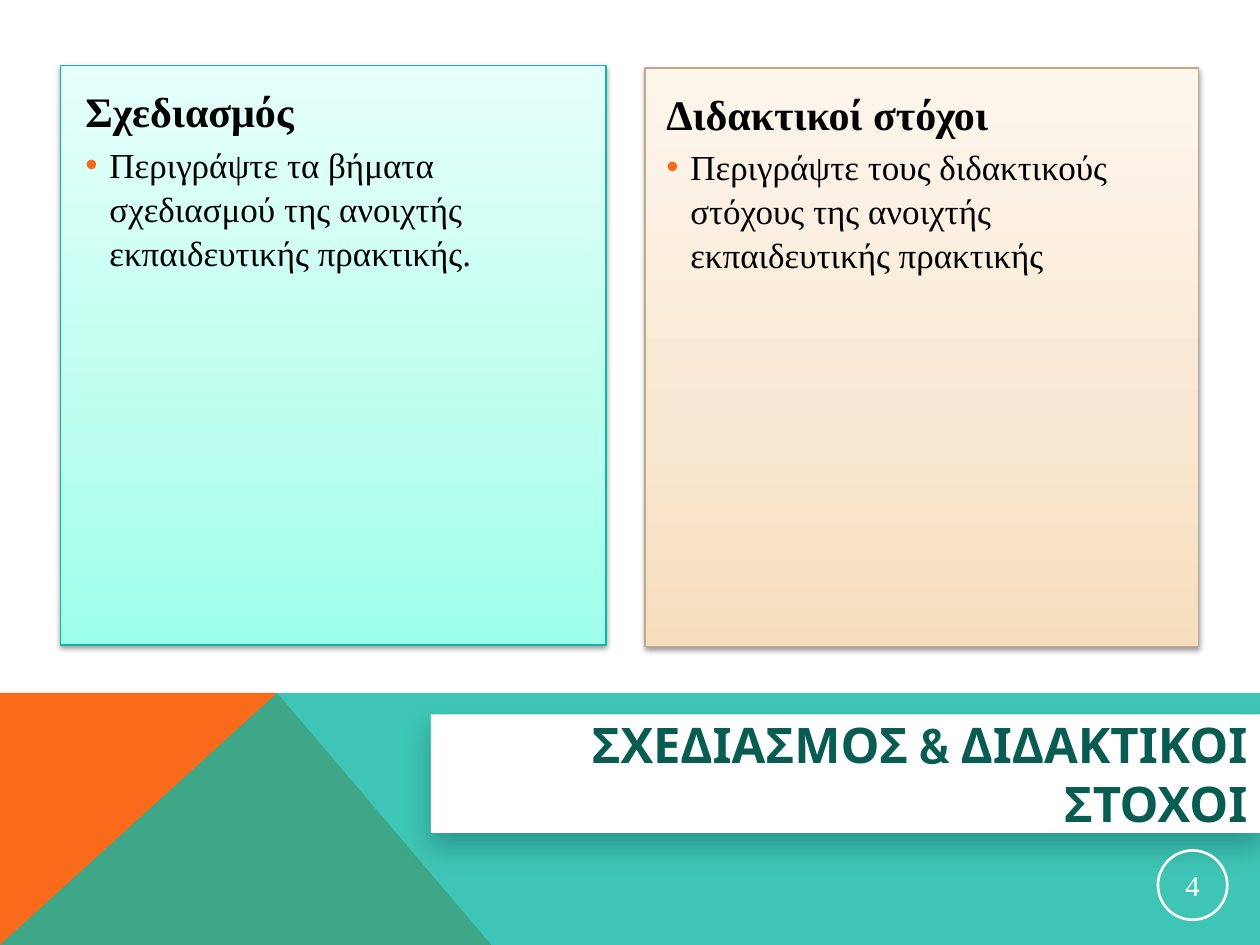
from dataclasses import dataclass

import pptx
import pptx.dml.color
import pptx.enum.shapes
import pptx.enum.text
import pptx.oxml.ns
import pptx.util
from lxml import etree

RGB = pptx.dml.color.RGBColor
Pt = pptx.util.Pt
SHAPE = pptx.enum.shapes.MSO_SHAPE
ALIGN = pptx.enum.text.PP_ALIGN
MIDDLE = pptx.enum.text.MSO_ANCHOR.MIDDLE

WHITE = RGB(0xFF, 0xFF, 0xFF)
BLACK = RGB(0, 0, 0)
ORANGE = RGB(0xF9, 0x6A, 0x1B)
TEAL = RGB(0x10, 0xB7, 0xA3)
DARK = RGB(0x08, 0x5C, 0x52)
MINT_LINE = RGB(0x0C, 0xB7, 0xA3)
MINT = (RGB(0x9D, 0xFF, 0xEA), RGB(0xBA, 0xFF, 0xEF), RGB(0xE5, 0xFF, 0xF9))
SAND_LINE = RGB(0xBF, 0xA9, 0x89)
SAND = (RGB(0xF6, 0xDE, 0xBD), RGB(0xF8, 0xE7, 0xD1), RGB(0xFD, 0xF6, 0xEC))
STOPS = (0, 35, 100)
SERIF = "Times New Roman"

# Grid of 100 columns by 75 rows, each a tenth of an inch
COLS, ROWS = 100, 75
CELL = pptx.util.Inches(0.1)


@dataclass
class Box:
    col: float
    row: float
    wide: float
    high: float

    def place(self) -> tuple:
        return tuple(round(n * CELL) for n in (self.col, self.row, self.wide, self.high))


@dataclass
class Shade:
    color: RGB
    alpha: int
    blur: float
    dist: float


@dataclass
class Panel:
    frame: Box
    text: Box
    tints: tuple
    line: RGB
    head: str
    item: str


SOFT = Shade(BLACK, 38, 3.1, 1.6)
DEEP = Shade(DARK, 40, 16, 8)
PANELS = (
    Panel(Box(51.2, 5.4, 43.9, 45.9), Box(51.9, 6.3, 42.3, 44.4), SAND, SAND_LINE,
          "Διδακτικοί στόχοι",
          "Περιγράψτε τους διδακτικούς στόχους της ανοιχτής εκπαιδευτικής πρακτικής"),
    Panel(Box(4.8, 5.2, 43.3, 46), Box(5.8, 6.1, 41.4, 44.4), MINT, MINT_LINE,
          "Σχεδιασμός",
          "Περιγράψτε τα βήματα σχεδιασμού της ανοιχτής εκπαιδευτικής πρακτικής."),
)


def add(parent, tag: str, **attrs):
    """Append one XML element and return it."""
    node = etree.SubElement(parent, pptx.oxml.ns.qn(tag))
    for key, val in attrs.items():
        node.set(key, str(val))
    return node


def add_tint(parent, color: RGB, alpha: int = 100) -> None:
    tint = add(parent, "a:srgbClr", val=color)
    if alpha < 100:
        add(tint, "a:alpha", val=alpha * 1000)


def cast(shape, shade: Shade) -> None:
    """Give a shape a shadow that falls straight down."""
    shape.shadow.inherit = False
    props = shape.element.spPr.find(pptx.oxml.ns.qn("a:effectLst"))
    outer = add(props, "a:outerShdw", blurRad=Pt(shade.blur), dist=Pt(shade.dist),
                dir=90 * 60000, algn="ctr", rotWithShape=0)
    add_tint(outer, shade.color, shade.alpha)


def style(para, size: float, color: RGB, face: str, bold: bool = False) -> None:
    for run in para.runs:
        font = run.font
        font.size, font.name, font.bold = Pt(size), face, bold
        font.color.rgb = color


def draw_poly(slide, points: list, color: RGB, alpha: int = 100) -> None:
    pen = slide.shapes.build_freeform(*points[0], scale=float(CELL))
    pen.add_line_segments(points[1:], close=True)
    shape = pen.convert_to_shape()
    shape.shadow.inherit = False
    shape.line.fill.background()
    shape.fill.solid()
    shape.fill.fore_color.rgb = color
    if alpha < 100:
        tint = shape.element.spPr.find(".//" + pptx.oxml.ns.qn("a:srgbClr"))
        add(tint, "a:alpha", val=alpha * 1000)


def draw_frame(slide, panel: Panel) -> None:
    shape = slide.shapes.add_shape(SHAPE.RECTANGLE, *panel.frame.place())
    shape.fill.gradient()
    shape.fill.gradient_angle = 90
    stops = shape.element.spPr.find(".//" + pptx.oxml.ns.qn("a:gsLst"))
    for old in list(stops):
        stops.remove(old)
    for pos, color in zip(STOPS, panel.tints):
        add_tint(add(stops, "a:gs", pos=pos * 1000), color)
    shape.line.color.rgb = panel.line
    shape.line.width = Pt(0.75)
    cast(shape, SOFT)


def draw_text(slide, panel: Panel) -> None:
    frame = slide.shapes.add_textbox(*panel.text.place()).text_frame
    frame.word_wrap = True
    head = frame.paragraphs[0]
    head.text = panel.head
    head.line_spacing = 1.05
    style(head, 24, BLACK, SERIF, True)

    item = frame.add_paragraph()
    item.text = panel.item
    item.line_spacing = 1.05
    item.space_before = Pt(3)
    props = item._p.get_or_add_pPr()
    hang = round(1.9 * CELL)
    props.set("marL", str(hang))
    props.set("indent", str(-hang))
    add_tint(add(props, "a:buClr"), ORANGE)
    add(props, "a:buFont", typeface="Arial")
    add(props, "a:buChar", char="•")
    style(item, 20, BLACK, SERIF)


def draw_title(slide, box: Box, text: str) -> None:
    title = slide.shapes.title
    title.element.getparent().append(title.element)  # bring to the front
    title.left, title.top, title.width, title.height = box.place()
    title.fill.solid()
    title.fill.fore_color.rgb = WHITE
    cast(title, DEEP)
    frame = title.text_frame
    frame.text = text
    frame.word_wrap = True
    frame.auto_size = pptx.enum.text.MSO_AUTO_SIZE.NONE
    frame.vertical_anchor = MIDDLE
    frame.paragraphs[0].alignment = ALIGN.RIGHT
    style(frame.paragraphs[0], 28, DARK, "Cabin", True)


def draw_badge(slide, box: Box, text: str) -> None:
    ring = slide.shapes.add_shape(SHAPE.OVAL, *box.place())
    ring.shadow.inherit = False
    ring.fill.background()
    ring.line.color.rgb = WHITE
    ring.line.width = Pt(1.5)
    frame = ring.text_frame
    frame.margin_left = frame.margin_right = Pt(0.72)
    frame.margin_top = frame.margin_bottom = Pt(0.72)
    frame.vertical_anchor = MIDDLE
    frame.text = text
    frame.paragraphs[0].alignment = ALIGN.CENTER
    style(frame.paragraphs[0], 16.5, WHITE, SERIF)


def main() -> None:
    deck = pptx.Presentation()
    deck.slide_width, deck.slide_height = COLS * CELL, ROWS * CELL
    slide = deck.slides.add_slide(deck.slide_layouts[5])

    # Footer band: orange wedge under a translucent teal sheet
    top, peak = 55.2, 22.3
    draw_poly(slide, [(0, ROWS), (0, top), (peak, top), (39.1, ROWS)], ORANGE)
    draw_poly(slide, [(0, ROWS), (peak, top), (COLS, top), (COLS, ROWS)], TEAL, 80)

    # Panels, title and page number
    for panel in PANELS:
        draw_frame(slide, panel)
    draw_title(slide, Box(34.2, 56.7, 65.8, 9.4), "ΣΧΕΔΙΑΣΜΟΣ & ΔΙΔΑΚΤΙΚΟΙ ΣΤΟΧΟΙ")
    for panel in reversed(PANELS):
        draw_text(slide, panel)
    draw_badge(slide, Box(91.9, 67.5, 5.5, 5.5), "4")

    deck.save("out.pptx")


if __name__ == "__main__":
    main()
